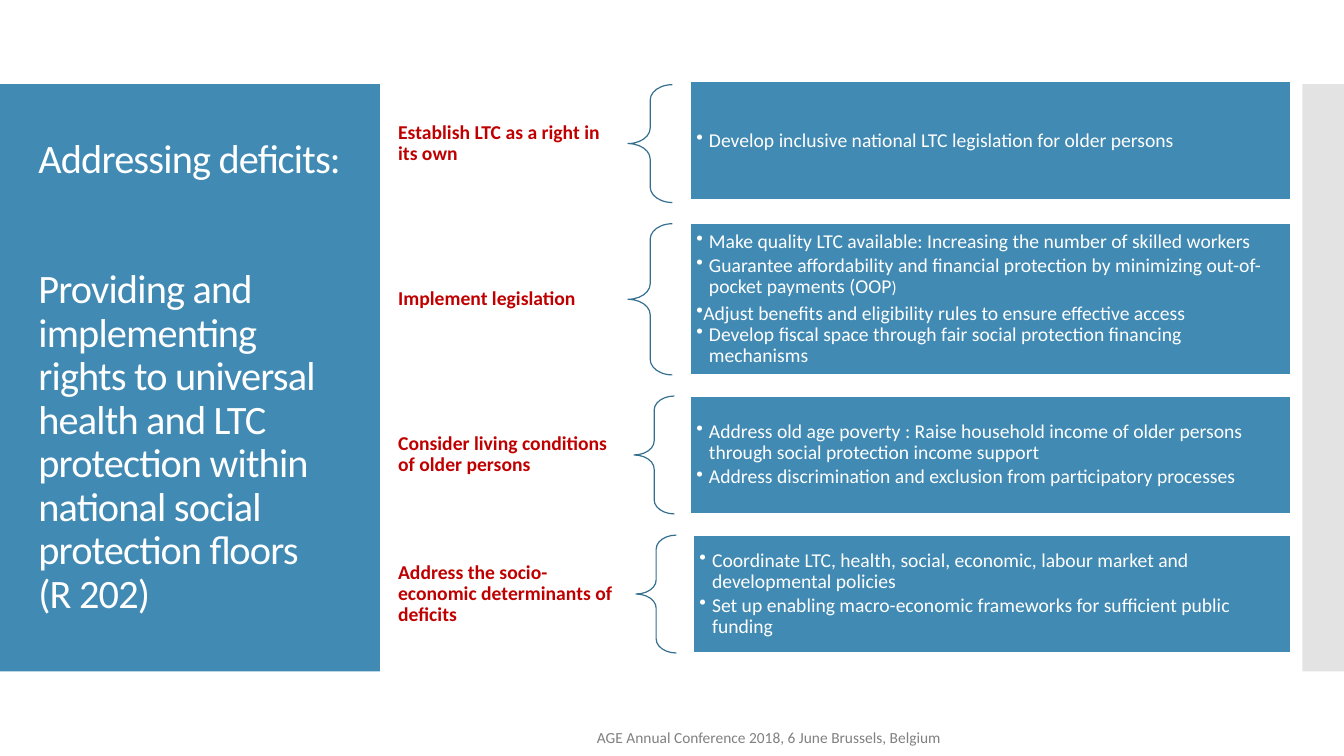
import pptx
import pptx.dml.color
import pptx.enum.shapes
import pptx.enum.text
import pptx.oxml
import pptx.oxml.ns
import pptx.util

Pt = pptx.util.Pt
RGBColor = pptx.dml.color.RGBColor
SHAPE = pptx.enum.shapes.MSO_SHAPE
ALIGN = pptx.enum.text.PP_ALIGN
MIDDLE = pptx.enum.text.MSO_ANCHOR.MIDDLE
NO_FIT = pptx.enum.text.MSO_AUTO_SIZE.NONE

BLUE = RGBColor(0x41, 0x8A, 0xB3)
BRACE_BLUE = RGBColor(0x34, 0x6F, 0x8F)
RED = RGBColor(0xC0, 0x00, 0x00)
SILVER = RGBColor(0xC8, 0xC8, 0xC8)
GRAY = RGBColor(0x80, 0x80, 0x80)
WHITE = RGBColor(0xFF, 0xFF, 0xFF)

FONT = "Calibri"
BODY_SIZE = 14
BULLET_INDENT = 9
ROW_GAP = 15.12
PANEL_RIGHT = 921.6

TITLE_PARTS = [
    "Addressing deficits:",
    "Providing and implementing rights to universal health and LTC protection "
    "within national social protection floors \v(R 202)",
]

# label, height, brace left, brace width, panel left, panel shift up, bullets
# A bullet is its text runs with their sizes, then whether it hangs.
ROWS = [
    ("Establish LTC as a right in its own", 84.2, 448.6, 31.7, 493.2, 2, [
        ([("Develop inclusive national LTC legislation for older persons", 14)], True),
    ]),
    ("Implement legislation", 108, 448.6, 31.7, 493.2, 0, [
        ([("Make quality LTC available: Increasing the number of skilled workers", 14)], True),
        ([("Guarantee affordability and financial protection by minimizing "
           "out-of-pocket payments (OOP", 14), (")", 12)], True),
        ([("Adjust benefits and eligibility rules to ensure effective access", 14)], False),
        ([("Develop fiscal space through fair social protection financing mechanisms", 14)], True),
    ]),
    ("Consider living conditions of older persons", 84.2, 452.9, 28.8, 493.2, 0, [
        ([("Address old age poverty : Raise household income of older persons "
           "through social protection income support", 14)], True),
        ([("Address discrimination and exclusion from participatory processes", 14)], True),
    ]),
    ("Address the socio-economic determinants of deficits", 84.2, 454.3, 28.8, 495.4, 0, [
        ([("Coordinate LTC, health, social, economic, labour market and "
           "developmental policies", 14)], True),
        ([("Set up enabling macro-economic frameworks for sufficient public funding", 14)], True),
    ]),
]


def add_run(para, text, size, color, bold=False):
    span = para.add_run()
    span.text = text
    span.font.name = FONT
    span.font.size = Pt(size)
    span.font.bold = bold
    span.font.color.rgb = color
    return span


def set_frame(frame, horizontal, vertical):
    frame.word_wrap = True
    frame.auto_size = NO_FIT
    frame.vertical_anchor = MIDDLE
    frame.margin_left = frame.margin_right = Pt(horizontal)
    frame.margin_top = frame.margin_bottom = Pt(vertical)


def next_para(frame, index):
    return frame.add_paragraph() if index else frame.paragraphs[0]


def add_block(page, left, top, width, height, fill):
    block = page.shapes.add_shape(
        SHAPE.RECTANGLE, Pt(left), Pt(top), Pt(width), Pt(height))
    block.shadow.inherit = False
    block.fill.solid()
    block.fill.fore_color.rgb = fill
    block.line.fill.background()
    return block


def add_bands(page, top, height):
    """Place the blue title band and the pale right-hand band behind the title."""
    title_band = add_block(page, 0, top, 271.4, height, BLUE)
    edge_band = add_block(page, 930.2, top, 29.8, height, SILVER)
    color = edge_band.element.find(".//" + pptx.oxml.ns.qn("a:srgbClr"))
    color.append(pptx.oxml.parse_xml(
        f'<a:alpha {pptx.oxml.ns.nsdecls("a")} val="50000"/>'))
    for band in (title_band, edge_band):
        page.shapes.title.element.addprevious(band.element)


def fill_title(page, left, top, width, height):
    title = page.shapes.title
    title.left, title.top = Pt(left), Pt(top)
    title.width, title.height = Pt(width), Pt(height)
    frame = title.text_frame
    set_frame(frame, 7.2, 3.6)
    for index, text in enumerate(TITLE_PARTS):
        para = next_para(frame, index)
        para.alignment = ALIGN.LEFT
        para.line_spacing = 0.9
        para.space_before = Pt(0)
        para.space_after = Pt(0 if index else 62)
        for line_index, line in enumerate(text.split("\v")):
            if line_index:
                para.add_line_break()
            span = add_run(para, line, 28.8, WHITE)
            span.font.element.set("spc", "-60") if hasattr(span.font, "element") \
                else span._r.get_or_add_rPr().set("spc", "-60")


def add_label(page, left, top, width, height, text):
    label = page.shapes.add_textbox(Pt(left), Pt(top), Pt(width), Pt(height))
    set_frame(label.text_frame, 7.9, 2.9)
    para = label.text_frame.paragraphs[0]
    para.line_spacing = 0.9
    add_run(para, text, BODY_SIZE, RED, bold=True)


def add_brace(page, left, top, width, height):
    brace = page.shapes.add_shape(
        SHAPE.LEFT_BRACE, Pt(left), Pt(top), Pt(width), Pt(height))
    brace.shadow.inherit = False
    brace.adjustments[0] = 0.35
    brace.adjustments[1] = 0.5
    brace.fill.background()
    brace.line.color.rgb = BRACE_BLUE
    brace.line.width = Pt(0.85)


def add_panel(page, left, top, width, height, bullets):
    panel = add_block(page, left, top, width, height, BLUE)
    panel.line.color.rgb = WHITE
    panel.line.width = Pt(0.85)
    frame = panel.text_frame
    set_frame(frame, 4.2, 4.2)
    for index, (spans, hangs) in enumerate(bullets):
        para = next_para(frame, index)
        para.alignment = ALIGN.LEFT
        if hangs:
            para.line_spacing = 0.9
            para.space_after = Pt(2)
        indent = Pt(BULLET_INDENT) if hangs else 0
        properties = para._p.get_or_add_pPr()
        properties.set("marL", str(indent))
        properties.set("indent", str(-indent))
        properties.append(pptx.oxml.parse_xml(
            f'<a:buChar {pptx.oxml.ns.nsdecls("a")} char="•"/>'))
        for text, size in spans:
            add_run(para, text, size, WHITE)


def add_rows(page, left, top):
    for label, height, brace_left, brace_width, panel_left, shift, bullets in ROWS:
        add_label(page, left, top, brace_left - left, height, label)
        add_brace(page, brace_left, top, brace_width, height)
        add_panel(page, panel_left, top - shift, PANEL_RIGHT - panel_left, height, bullets)
        top += height + ROW_GAP


def add_footer(page, left, top, width, height):
    footer = page.shapes.add_textbox(Pt(left), Pt(top), Pt(width), Pt(height))
    set_frame(footer.text_frame, 7.2, 3.6)
    para = footer.text_frame.paragraphs[0]
    para.alignment = ALIGN.CENTER
    add_run(para, "AGE Annual Conference 2018, 6 June Brussels, Belgium", 11, GRAY)


def main():
    deck = pptx.Presentation()
    deck.slide_width, deck.slide_height = Pt(960), Pt(540)
    page = deck.slides.add_slide(deck.slide_layouts[5])
    add_bands(page, 60, 419.5)
    fill_title(page, 20.2, 88.6, 231.8, 362.2)
    add_rows(page, 276.5, 60.5)
    add_footer(page, 316.8, 514, 465.1, 26)
    deck.save("out.pptx")


if __name__ == "__main__":
    main()
